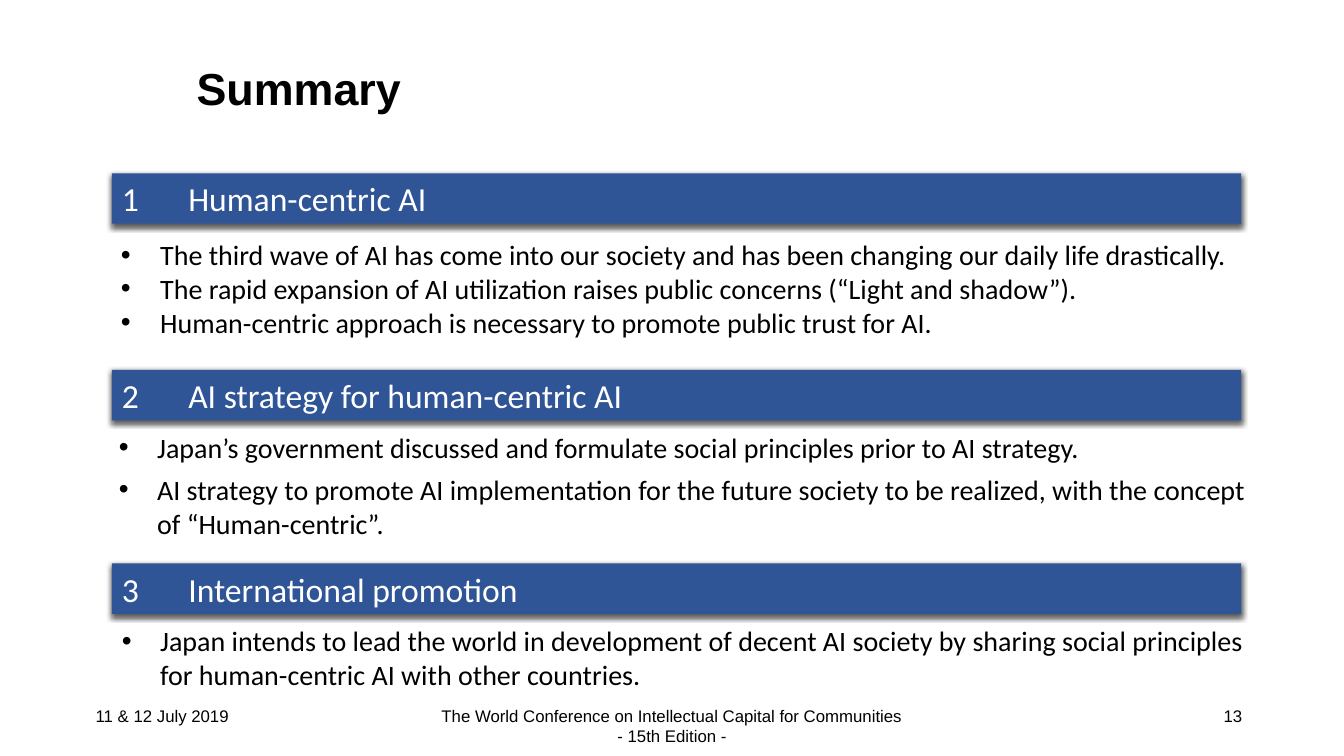
from lxml.etree import SubElement
from pptx import Presentation
from pptx.dml.color import RGBColor
from pptx.enum.shapes import MSO_SHAPE
from pptx.enum.text import MSO_ANCHOR, PP_ALIGN
from pptx.oxml.ns import qn
from pptx.util import Inches, Pt

BLACK = RGBColor(0x00, 0x00, 0x00)
WHITE = RGBColor(0xFF, 0xFF, 0xFF)
BLUE = RGBColor(0x2F, 0x55, 0x97)

TITLE = "Summary"
SECTIONS = [
    {
        "heading": "Human-centric AI",
        "bar_top": 1.72,
        "body": (1.1, 2.31, 11.32, 1.11),
        "indent": 0.39,
        "space": 0,
        "bullets": [
            "The third wave of AI has come into our society and has been changing our daily life drastically.",
            "The rapid expansion of AI utilization raises public concerns (“Light and shadow”).",
            "Human-centric approach is necessary to promote public trust for AI.",
        ],
    },
    {
        "heading": "AI strategy for human-centric AI",
        "bar_top": 3.67,
        "body": (1.08, 4.22, 11.58, 1.19),
        "indent": 0.38,
        "space": 6,
        "bullets": [
            "Japan’s government discussed and formulate social principles prior to AI strategy.",
            "AI strategy to promote AI implementation for the future society to be realized, "
            "with the concept of “Human-centric”.",
        ],
    },
    {
        "heading": "International promotion",
        "bar_top": 5.59,
        "body": (1.11, 6.14, 11.49, 0.77),
        "indent": 0.38,
        "space": 0,
        "bullets": [
            "Japan intends to lead the world in development of decent AI society by sharing "
            "social principles for human-centric AI with other countries.",
        ],
    },
]
FOOTERS = [
    ("11 & 12 July 2019", (0.85, 6.95, 1.58, 0.3), PP_ALIGN.LEFT),
    (
        "The World Conference on Intellectual Capital for Communities\n- 15th Edition -",
        (4.24, 6.95, 4.85, 0.5),
        PP_ALIGN.CENTER,
    ),
    ("13", (9.42, 6.95, 3, 0.4), PP_ALIGN.RIGHT),
]

BAR_LEFT, BAR_WIDTH, BAR_HEIGHT = 1.11, 11.2, 0.5
HEADING_TAB = 0.66
TITLE_FORMAT = {"name": "Arial", "size": Pt(32), "bold": True}
HEADING_FORMAT = {"name": "Calibri", "size": Pt(24)}
BULLET_FORMAT = {"name": "Calibri", "size": Pt(20)}
FOOTER_FORMAT = {"name": "Arial", "size": Pt(12)}


def write(paragraph, text, font_format, color=BLACK, align=PP_ALIGN.LEFT):
    paragraph.text = text
    paragraph.alignment = align
    for run in paragraph.runs:
        for name, value in font_format.items():
            setattr(run.font, name, value)
        run.font.color.rgb = color


def add_text_box(slide, box):
    frame = slide.shapes.add_textbox(*map(Inches, box)).text_frame
    frame.word_wrap = True
    return frame


def add_shadow(shape):
    shape.shadow.inherit = False
    effects = shape._element.spPr.find(qn("a:effectLst"))
    shadow = SubElement(effects, qn("a:outerShdw"), blurRad=str(Pt(4.5)),
                        dist=str(Pt(1.5)), dir="5400000", rotWithShape="0")
    color = SubElement(shadow, qn("a:srgbClr"), val=str(BLACK))
    SubElement(color, qn("a:alpha"), val="63000")


def add_heading(slide, number, section):
    box = (BAR_LEFT, section["bar_top"], BAR_WIDTH, BAR_HEIGHT)
    bar = slide.shapes.add_shape(MSO_SHAPE.RECTANGLE, *map(Inches, box))
    bar.fill.solid()
    bar.fill.fore_color.rgb = BLUE
    bar.line.fill.background()
    add_shadow(bar)
    bar.text_frame.word_wrap = True
    bar.text_frame.vertical_anchor = MSO_ANCHOR.TOP
    paragraph = bar.text_frame.paragraphs[0]
    tabs = SubElement(paragraph._p.get_or_add_pPr(), qn("a:tabLst"))
    SubElement(tabs, qn("a:tab"), pos=str(Inches(HEADING_TAB)), algn="l")
    write(paragraph, f"{number}\t{section['heading']}", HEADING_FORMAT, WHITE)


def add_bullets(slide, section):
    frame = add_text_box(slide, section["body"])
    indent = Inches(section["indent"])
    for index, text in enumerate(section["bullets"]):
        paragraph = frame.add_paragraph() if index else frame.paragraphs[0]
        properties = paragraph._p.get_or_add_pPr()
        properties.set("marL", str(indent))
        properties.set("indent", str(-indent))
        SubElement(properties, qn("a:buFont"), typeface="Arial")
        SubElement(properties, qn("a:buChar"), char="•")
        if index:
            paragraph.space_before = Pt(section["space"])
        write(paragraph, text, BULLET_FORMAT)


def main():
    """Build the summary slide and save it."""
    presentation = Presentation()
    presentation.slide_width = Inches(13.33)
    presentation.slide_height = Inches(7.5)
    slide = presentation.slides.add_slide(presentation.slide_layouts[5])

    title = slide.shapes.title
    title.left, title.top, title.width, title.height = map(Inches, (1.85, 0.55, 10.73, 0.7))
    title.text_frame.vertical_anchor = MSO_ANCHOR.MIDDLE
    heading = title.text_frame.paragraphs[0]
    heading.line_spacing = 0.9
    write(heading, TITLE, TITLE_FORMAT)

    for number, section in enumerate(SECTIONS, 1):
        add_heading(slide, number, section)
        add_bullets(slide, section)
    for text, box, align in FOOTERS:
        write(add_text_box(slide, box).paragraphs[0], text, FOOTER_FORMAT, align=align)

    presentation.save("out.pptx")


if __name__ == "__main__":
    main()
